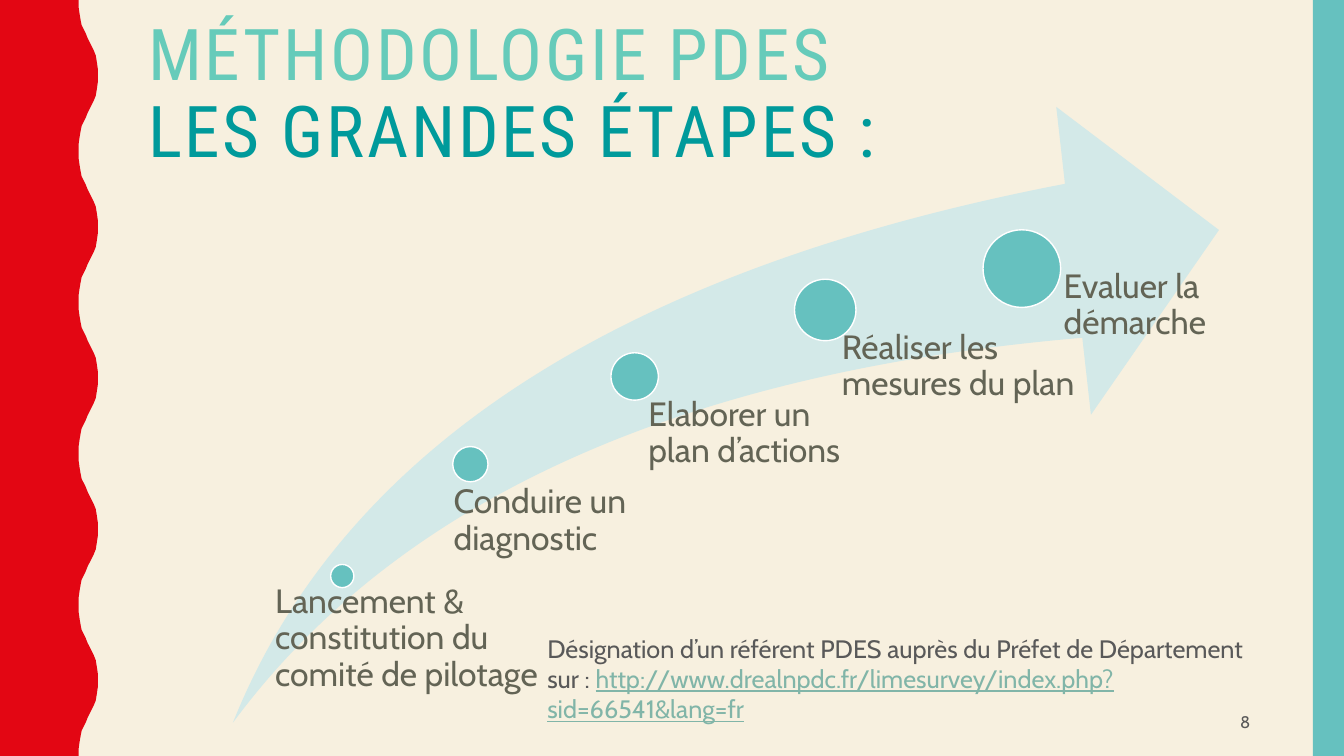
"""Build the slide presenting the main steps of the PDES method."""
from dataclasses import dataclass

from pptx import Presentation
from pptx.dml.color import RGBColor
from pptx.enum.shapes import MSO_SHAPE as Shape
from pptx.enum.text import MSO_ANCHOR as Anchor, PP_ALIGN as Align
from pptx.util import Inches, Pt

TITLE = ["MÉTHODOLOGIE PDES", "LES GRANDES ÉTAPES :"]
STEPS = [
    ("Lancement & constitution du comité de pilotage",
     (3.28, 5.6, 0.23), (2.61, 5.8, 2.85, 1.46), 0.12),
    ("Conduire un diagnostic",
     (4.49, 4.43, 0.35), (4.31, 4.81, 2.42, 2.56), 0.19),
    ("Elaborer un plan d’actions",
     (6.06, 3.5, 0.47), (6.18, 3.94, 2.33, 3.44), 0.25),
    ("Réaliser les mesures du plan",
     (7.88, 2.77, 0.61), (8.03, 3.28, 2.72, 4.1), 0.32),
    ("Evaluer la démarche",
     (9.75, 2.28, 0.77), (10.14, 2.67, 1.96, 4.5), 0.41),
]
REFERENT = "Désignation d’un référent PDES auprès du Préfet de Département sur : "
SURVEY_URL = "http://www.drealnpdc.fr/limesurvey/index.php?sid=66541&lang=fr"
SLIDE_NUMBER = "8"

SLIDE_W, SLIDE_H = 13.33, 7.5
WAVE_COUNT = 5
WAVE_PERIOD = SLIDE_H / WAVE_COUNT
HALF_WAVE = [
    (0.78, 0), (0.78, 0.07), (0.79, 0.14), (0.8, 0.2), (0.81, 0.25),
    (0.83, 0.29), (0.85, 0.33), (0.87, 0.38), (0.89, 0.42), (0.91, 0.46),
    (0.93, 0.5), (0.95, 0.55), (0.96, 0.61), (0.97, 0.68), (0.97, 0.75),
]


@dataclass(frozen=True)
class Theme:
    background: str = "F7F0DF"
    wave: str = "E30613"
    teal: str = "66C1BF"
    arrow: str = "D3E9E8"
    outline: str = "FFFFFF"
    title_colors: tuple = ("66CBBA", "009A9B")
    step_text: str = "636455"
    body_text: str = "595959"
    link: str = "81B5A8"
    title_font: str = "Roboto Condensed"
    body_font: str = "Cabin"
    title_size: int = 51
    step_size: int = 24
    note_size: int = 18
    number_size: int = 12


THEME = Theme()


def rgb(color):
    return RGBColor.from_string(color)


def paint(shape, color, outline=None):
    shape.shadow.inherit = False
    shape.fill.solid()
    shape.fill.fore_color.rgb = rgb(color)
    if outline:
        shape.line.color.rgb = rgb(outline)
        shape.line.width = Pt(1)
    else:
        shape.line.fill.background()


def add_preset(slide, preset, box, color, outline=None):
    shape = slide.shapes.add_shape(preset, *map(Inches, box))
    paint(shape, color, outline)
    return shape


def add_frame(slide, box):
    frame = slide.shapes.add_textbox(*map(Inches, box)).text_frame
    frame.word_wrap = True
    return frame


def add_run(paragraph, text, size, color, face=THEME.body_font):
    run = paragraph.add_run()
    run.text = text
    run.font.name = face
    run.font.size = Pt(size)
    run.font.color.rgb = rgb(color)
    return run


def add_wave(slide):
    period = HALF_WAVE + [(x, WAVE_PERIOD - y) for x, y in HALF_WAVE[-2::-1]]
    edge = [(Inches(x), Inches(y + i * WAVE_PERIOD))
            for i in range(WAVE_COUNT) for x, y in period]
    builder = slide.shapes.build_freeform(0, 0, scale=1.0)
    builder.add_line_segments(edge + [(0, Inches(SLIDE_H))], close=True)
    paint(builder.convert_to_shape(), THEME.wave)


def add_title(slide):
    paragraph = add_frame(slide, (1.37, 0.14, 11.13, 1.63)).paragraphs[0]
    paragraph.line_spacing = 0.9
    for i, (line, color) in enumerate(zip(TITLE, THEME.title_colors)):
        if i:
            paragraph.add_line_break()
        run = add_run(paragraph, line, THEME.title_size, color, THEME.title_font)
        run.font._element.set("spc", "200")


def add_steps(slide):
    arrow = add_preset(slide, Shape.SWOOSH_ARROW, (2.31, 1.06, 9.78, 6.11), THEME.arrow)
    arrow.adjustments[0] = arrow.adjustments[1] = 0.25
    for label, (left, top, diameter), box, inset in STEPS:
        add_preset(slide, Shape.OVAL, (left, top, diameter, diameter),
                   THEME.teal, THEME.outline)
        frame = add_frame(slide, box)
        frame.margin_left = Inches(inset)
        frame.margin_top = frame.margin_right = frame.margin_bottom = 0
        paragraph = frame.paragraphs[0]
        paragraph.line_spacing = 0.9
        add_run(paragraph, label, THEME.step_size, THEME.step_text)


def add_note(slide):
    paragraph = add_frame(slide, (5.33, 6.23, 7.35, 0.71)).paragraphs[0]
    add_run(paragraph, REFERENT, THEME.note_size, THEME.body_text)
    add_run(paragraph, SURVEY_URL, THEME.note_size, THEME.link).font.underline = True


def add_number(slide):
    frame = add_frame(slide, (9.42, 6.97, 3.08, 0.38))
    frame.vertical_anchor = Anchor.MIDDLE
    paragraph = frame.paragraphs[0]
    paragraph.alignment = Align.RIGHT
    add_run(paragraph, SLIDE_NUMBER, THEME.number_size, THEME.body_text)


def main():
    deck = Presentation()
    deck.slide_width, deck.slide_height = Inches(SLIDE_W), Inches(SLIDE_H)
    slide = deck.slides.add_slide(deck.slide_layouts[6])
    slide.background.fill.solid()
    slide.background.fill.fore_color.rgb = rgb(THEME.background)
    add_wave(slide)
    add_preset(slide, Shape.RECTANGLE, (13.02, 0, 0.31, SLIDE_H), THEME.teal)
    add_title(slide)
    add_steps(slide)
    add_note(slide)
    add_number(slide)
    deck.save("out.pptx")


if __name__ == "__main__":
    main()
